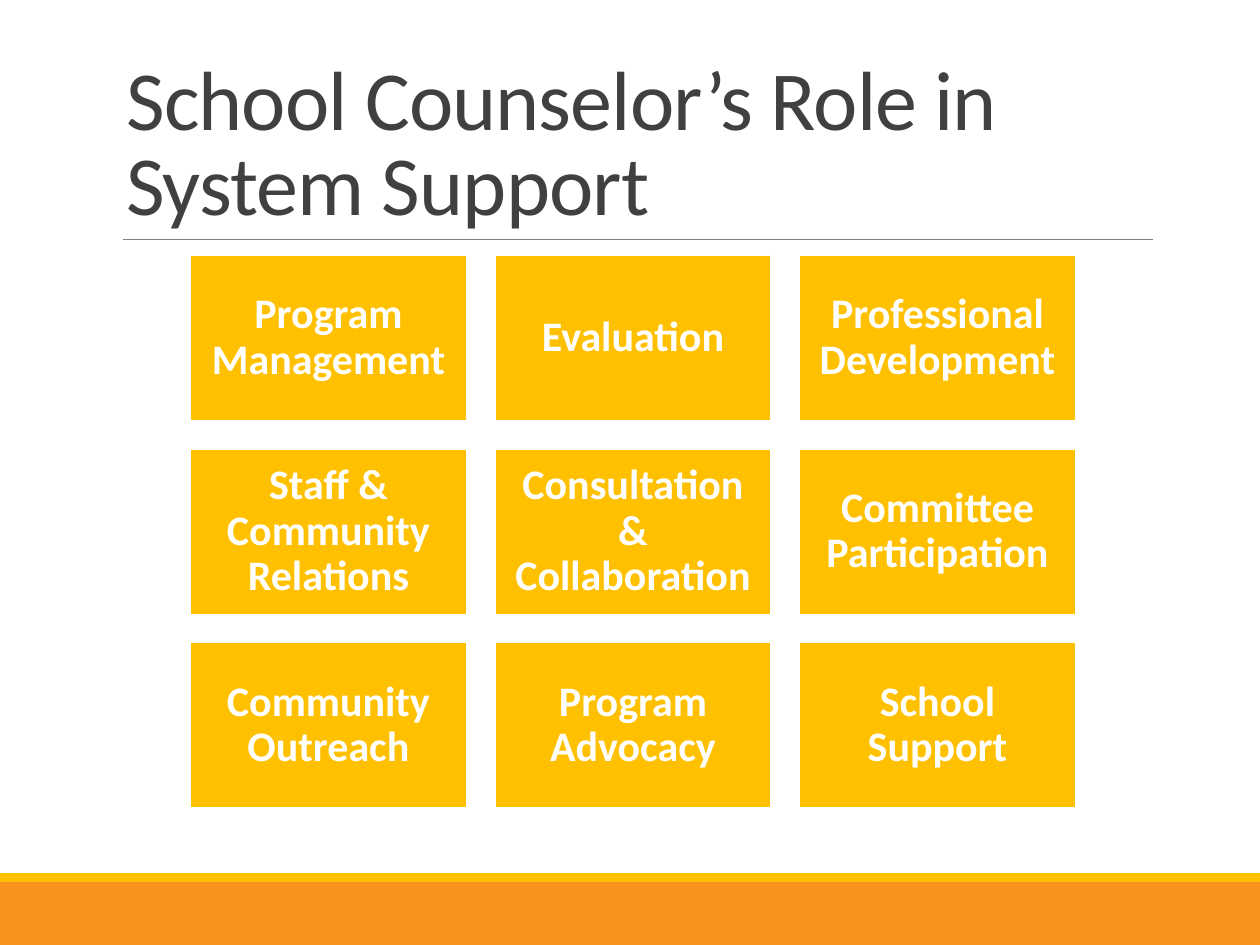
from dataclasses import dataclass

from lxml.etree import SubElement
from pptx import Presentation
from pptx.dml.color import RGBColor
from pptx.enum.shapes import MSO_CONNECTOR, MSO_SHAPE
from pptx.enum.text import MSO_ANCHOR, MSO_AUTO_SIZE, PP_ALIGN
from pptx.oxml.ns import qn
from pptx.shapes.autoshape import Shape
from pptx.slide import Slide
from pptx.util import Pt

ORANGE = RGBColor(0xF8, 0x93, 0x1D)
GOLD = RGBColor(0xFF, 0xC0, 0x00)
WHITE = RGBColor(0xFF, 0xFF, 0xFF)
GRAY = RGBColor(0x80, 0x80, 0x80)
DARK_GRAY = RGBColor(0x40, 0x40, 0x40)
FONT = "Calibri"

SLIDE_WIDTH, SLIDE_HEIGHT = 720, 540
COLUMNS = 3
GRID_LEFT, GRID_TOP = 108.6, 145.5
ROLE_WIDTH, ROLE_HEIGHT = 158.2, 95
COLUMN_STEP, ROW_STEP = 174, 110.8

ROLES = [
    "Program Management", "Evaluation", "Professional Development",
    "Staff & Community Relations", "Consultation & Collaboration", "Committee Participation",
    "Community Outreach", "Program Advocacy", "School Support",
]


@dataclass(frozen=True)
class Box:
    left: float
    top: float
    width: float
    height: float
    fill: RGBColor


FOOTER_BANDS = [
    Box(0, 504, SLIDE_WIDTH, 36, ORANGE),
    Box(0, 499, SLIDE_WIDTH, 5, GOLD),
]


def add_box(slide: Slide, box: Box) -> Shape:
    shape = slide.shapes.add_shape(
        MSO_SHAPE.RECTANGLE, Pt(box.left), Pt(box.top), Pt(box.width), Pt(box.height)
    )
    shape.shadow.inherit = False
    shape.fill.solid()
    shape.fill.fore_color.rgb = box.fill
    shape.line.fill.background()
    return shape


def add_role(slide: Slide, index: int, role: str) -> None:
    """Place a role in the grid, counting row by row."""
    row, column = divmod(index, COLUMNS)
    tile = add_box(slide, Box(GRID_LEFT + column * COLUMN_STEP, GRID_TOP + row * ROW_STEP,
                              ROLE_WIDTH, ROLE_HEIGHT, GOLD))
    tile.line.color.rgb = WHITE
    tile.line.width = Pt(1.25)
    frame = tile.text_frame
    frame.word_wrap = True
    frame.vertical_anchor = MSO_ANCHOR.MIDDLE
    frame.margin_left = frame.margin_right = Pt(7.2)
    frame.margin_top = frame.margin_bottom = Pt(7.2)
    frame.text = role
    paragraph = frame.paragraphs[0]
    paragraph.alignment = PP_ALIGN.CENTER
    paragraph.line_spacing = 0.9
    font = paragraph.runs[0].font
    font.name, font.size, font.bold = FONT, Pt(24), True
    font.color.rgb = WHITE


def add_title_rule(slide: Slide) -> None:
    rule = slide.shapes.add_connector(
        MSO_CONNECTOR.STRAIGHT, Pt(70.4), Pt(136.8), Pt(658.8), Pt(136.8)
    )
    rule.line.color.rgb = GRAY
    rule.line.width = Pt(0.5)
    SubElement(rule._element.spPr, qn("a:effectLst"))


def set_title(slide: Slide, text: str) -> None:
    title = slide.shapes.title
    title.left, title.top, title.width, title.height = Pt(65), Pt(22.3), Pt(594), Pt(114.5)
    frame = title.text_frame
    frame.auto_size = MSO_AUTO_SIZE.NONE
    frame.word_wrap = True
    frame.vertical_anchor = MSO_ANCHOR.BOTTOM
    frame.text = text
    paragraph = frame.paragraphs[0]
    paragraph.alignment = PP_ALIGN.LEFT
    paragraph.line_spacing = 0.85
    for run in paragraph.runs:
        run.font.name, run.font.size = FONT, Pt(48)
        run.font.color.rgb = DARK_GRAY
        run.font._element.set("spc", "-50")


def main() -> None:
    presentation = Presentation()
    presentation.slide_width = Pt(SLIDE_WIDTH)
    presentation.slide_height = Pt(SLIDE_HEIGHT)
    slide = presentation.slides.add_slide(presentation.slide_layouts[5])
    for band in FOOTER_BANDS:
        add_box(slide, band)
    add_title_rule(slide)
    set_title(slide, "School Counselor’s Role in\vSystem Support")
    for index, role in enumerate(ROLES):
        add_role(slide, index, role)
    presentation.save("out.pptx")


if __name__ == "__main__":
    main()
